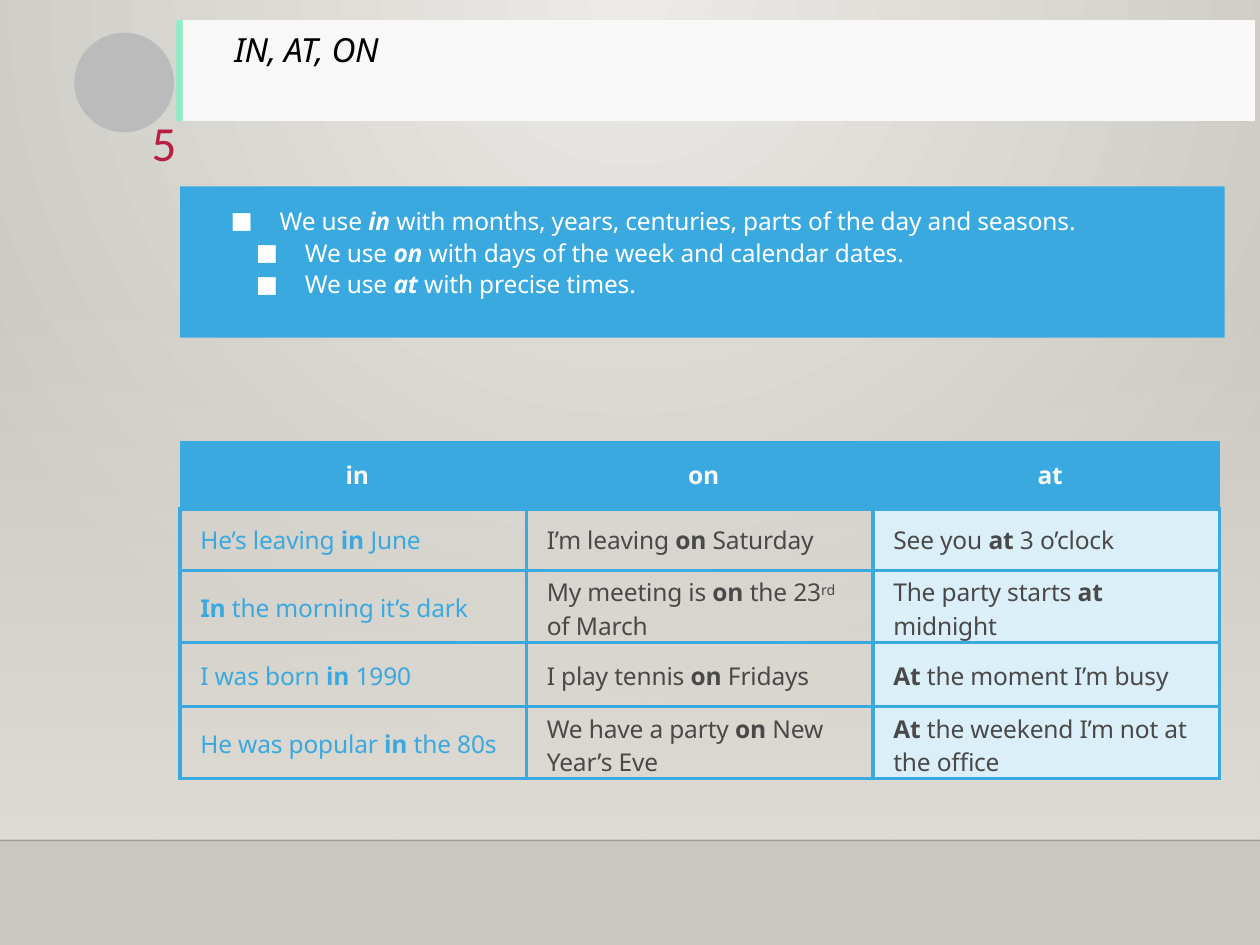
from lxml import etree
from pptx import Presentation
from pptx.dml.color import RGBColor
from pptx.enum import shapes, text
from pptx.oxml import parse_xml
from pptx.oxml.ns import nsdecls, qn
from pptx.util import Inches, Pt

# Content: *emphasis*, ^superscript^; each inner list holds the lines of a cell
TITLE = "IN, AT, ON"
NUMBER = "5"
RULES = [
    "We use *in* with months, years, centuries, parts of the day and seasons.",
    "We use *on* with days of the week and calendar dates.",
    "We use *at* with precise times.",
]
HEADER = [["in"], ["on"], ["at"]]
EXAMPLES = [
    [["He’s leaving *in* June"], ["I’m leaving *on* Saturday"], ["See you *at* 3 o’clock"]],
    [["*In* the morning it’s dark"], ["My meeting is *on* the 23^rd^", "of March"],
     ["The party starts *at*", "midnight"]],
    [["I was born *in* 1990"], ["I play tennis *on* Fridays"], ["*At* the moment I’m busy"]],
    [["He was popular *in* the 80s"], ["We have a party *on* New", "Year’s Eve"],
     ["*At* the weekend I’m not at", "the office"]],
]
ROWS = [(0.54, 0.14), (0.49, 0.11), (0.57, 0.16), (0.51, 0.13), (0.57, 0.16)]  # height, top margin
TWO_LINE_MARGIN = 0.04
COLUMN_WIDTH = 2.75

THEME = {
    "font": "Noto Sans", "number_font": "Calibri",
    "title_size": 19, "text_size": 14, "number_size": 28,
    "blue": "39A9DF", "pale_blue": "DBEFF8", "mint": "8AEEC8", "white": "FFFFFF",
    "panel": "F8F8F8", "grey": "BBBBBB", "dark": "494949", "red": "B71E42",
    "black": "000000", "light": "ECEAE7", "shade": "CAC7C1", "wall": "DFDBD5",
}
BORDER = 2.25


def color(name):
    return RGBColor.from_string(THEME[name])


def write(frame, lines, size="text_size", font="font", ink="dark", align="LEFT", bold=False,
          italic=False, strong_italic=False, tracking=-0.1, indents=(0,), bullet=None,
          line_spacing=1.0, space_before=0):
    """Fill a text frame with one paragraph per line."""
    for index, line in enumerate(lines):
        paragraph = frame.paragraphs[0] if index == 0 else frame.add_paragraph()
        properties = paragraph._p.get_or_add_pPr()
        indent = Inches(indents[min(index, len(indents) - 1)])
        properties.set("marL", str(indent))
        properties.set("indent", str(-Inches(0.39) if bullet else 0))
        if bullet:
            etree.SubElement(properties, qn("a:buSzPct")).set("val", "150000")
            etree.SubElement(properties, qn("a:buChar")).set("char", bullet)
        paragraph.alignment = getattr(text.PP_ALIGN, align)
        paragraph.line_spacing = line_spacing
        paragraph.space_before = Pt(space_before if index else 0)
        for part, piece in enumerate(line.split("*")):
            for level, words in enumerate(piece.split("^")):
                if not words:
                    continue
                run = paragraph.add_run()
                run.text = words
                run.font.name = THEME[font]
                run.font.size = Pt(THEME[size])
                run.font.bold = bold or part % 2 == 1
                run.font.italic = italic or (strong_italic and part % 2 == 1)
                run.font.color.rgb = color(ink)
                run_properties = run._r.get_or_add_rPr()
                run_properties.set("spc", str(round(tracking * 100)))
                if level % 2:
                    run_properties.set("baseline", "25000")


def place(shape, left, top, width, height, margin_top=0.01):
    """Position a text shape and clear its insets."""
    shape.left, shape.top, shape.width, shape.height = map(Inches, (left, top, width, height))
    frame = shape.text_frame
    frame.word_wrap = True
    frame.auto_size = text.MSO_AUTO_SIZE.NONE
    frame.vertical_anchor = text.MSO_ANCHOR.TOP
    frame.margin_left = frame.margin_right = frame.margin_bottom = 0
    frame.margin_top = Inches(margin_top)
    return frame


def add_block(slide, kind, box, fill):
    shape = slide.shapes.add_shape(kind, *map(Inches, box))
    shape.shadow.inherit = False
    shape.line.fill.background()
    if fill:
        shape.fill.solid()
        shape.fill.fore_color.rgb = color(fill)
    return shape


def set_gradient(fill, element, stops, direction):
    """Give a fill its (position, colour, opacity) stops and a direction element."""
    fill.gradient()
    gradient = next(element.iter(qn("a:gradFill")))
    gradient.clear()
    stop_list = etree.SubElement(gradient, qn("a:gsLst"))
    for position, name, opacity in stops:
        stop = etree.SubElement(stop_list, qn("a:gs"), pos=str(position * 1000))
        tone = etree.SubElement(stop, qn("a:srgbClr"), val=THEME[name])
        etree.SubElement(tone, qn("a:alpha"), val=str(opacity * 1000))
    gradient.append(parse_xml(direction))


def add_borders(cell):
    properties = cell._tc.get_or_add_tcPr()
    for side in "LRTB":
        properties.append(parse_xml(
            f'<a:ln{side} {nsdecls("a")} w="{Pt(BORDER)}"><a:solidFill>'
            f'<a:srgbClr val="{THEME["blue"]}"/></a:solidFill></a:ln{side}>'))


def add_example_table(slide):
    height = sum(row_height for row_height, _ in ROWS)
    frame = slide.shapes.add_table(len(ROWS), len(HEADER), *map(
        Inches, (1.43, 3.5, COLUMN_WIDTH * len(HEADER), height)))
    table = frame.table
    table.first_row = table.horz_banding = False
    style = next(table._tbl.iter(qn("a:tableStyleId")))
    style.text = "{2D5ABB26-0587-4C30-8999-92F81FD0307C}"  # no style, no grid
    for column in table.columns:
        column.width = Inches(COLUMN_WIDTH)
    for row, (cells, (row_height, margin)) in enumerate(zip([HEADER] + EXAMPLES, ROWS)):
        table.rows[row].height = Inches(row_height)
        for column, lines in enumerate(cells):
            cell = table.cell(row, column)
            cell.margin_left = cell.margin_right = cell.margin_bottom = 0
            cell.margin_top = Inches(margin if len(lines) == 1 else TWO_LINE_MARGIN)
            if row:
                add_borders(cell)
                write(cell.text_frame, lines, ink="dark" if column else "blue", indents=(0.16,))
            else:
                write(cell.text_frame, lines, ink="panel", align="CENTER", bold=True,
                      indents=(0.06,))
            fill = "blue" if row == 0 else "pale_blue" if column == 2 else None
            if fill:
                cell.fill.solid()
                cell.fill.fore_color.rgb = color(fill)
            else:
                cell.fill.background()


def main():
    presentation = Presentation()
    presentation.slide_width, presentation.slide_height = Inches(10), Inches(7.5)
    slide = presentation.slides.add_slide(presentation.slide_layouts[1])
    title, body = slide.placeholders
    rectangle = shapes.MSO_SHAPE.RECTANGLE

    # Background, wall and floor line
    set_gradient(slide.background.fill, slide.element, [(0, "light", 100), (100, "shade", 100)],
                 f'<a:path {nsdecls("a")} path="circle">'
                 '<a:fillToRect l="43000" t="0" r="43000" b="100000"/></a:path>')
    wall = add_block(slide, rectangle, (0, 2.2, 10, 4.46), None)
    set_gradient(wall.fill, wall.element, [(0, "wall", 0), (100, "wall", 100)],
                 f'<a:lin {nsdecls("a")} ang="5400000" scaled="0"/>')
    floor = slide.shapes.add_connector(shapes.MSO_CONNECTOR.STRAIGHT, 0, Inches(6.67),
                                       Inches(10), Inches(6.67))
    floor.line.width = Pt(1)
    floor.line.color.rgb = color("black")
    tone = next(floor.element.spPr.iter(qn("a:srgbClr")))
    etree.SubElement(tone, qn("a:alpha"), val="20000")
    etree.SubElement(floor.element.spPr, qn("a:effectLst"))

    # Title band, number disc and rules panel
    add_block(slide, rectangle, (1.45, 0.16, 8.51, 0.8), "panel")
    add_block(slide, rectangle, (1.4, 0.16, 0.05, 0.8), "mint")
    add_block(slide, shapes.MSO_SHAPE.OVAL, (0.59, 0.26, 0.79, 0.79), "grey")
    add_block(slide, rectangle, (1.43, 1.48, 8.29, 1.2), "blue")

    # Texts, with the placeholders brought in front of the panels
    for placeholder in (body, title):
        slide.shapes._spTree.append(placeholder.element)
    write(place(body, 1.83, 1.65, 6.76, 0.84), RULES, ink="white", strong_italic=True,
          indents=(0.39, 0.59), bullet="■", line_spacing=0.9, space_before=3)
    write(place(title, 1.86, 0.26, 1.42, 0.33), [TITLE], size="title_size", ink="black",
          italic=True, tracking=-0.2, line_spacing=0.9)
    number = slide.shapes.add_textbox(0, 0, 0, 0)
    write(place(number, 0.53, 0.87, 0.87, 0.55, margin_top=0.02), [NUMBER], size="number_size",
          font="number_font", ink="red", align="RIGHT", tracking=0)

    add_example_table(slide)
    presentation.save("out.pptx")


if __name__ == "__main__":
    main()
